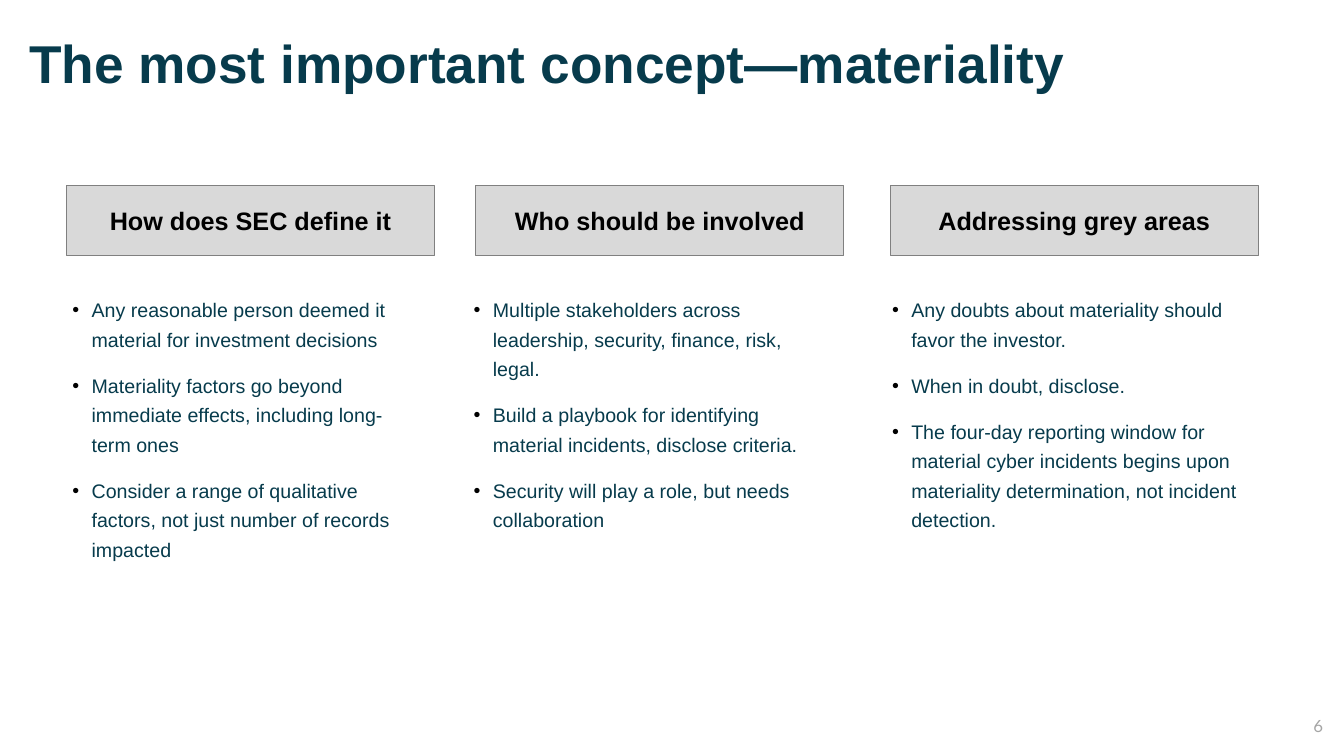
from lxml import etree
from pptx import Presentation
from pptx.dml.color import RGBColor
from pptx.enum.shapes import MSO_SHAPE
from pptx.enum.text import MSO_ANCHOR as ANCHOR, MSO_AUTO_SIZE as AUTO, PP_ALIGN as ALIGN
from pptx.oxml.ns import qn
from pptx.util import Inches, Pt

COLORS = {"navy": "073B4C", "black": "000000", "header": "D9D9D9",
          "border": "808080", "number": "A5A5A5"}
HEADER_TOP, HEADER_W, HEADER_H = 1.84, 3.65, 0.7
BULLETS_TOP = 2.8

# header text, header left, bullet box (left, width, height), bullets
COLUMNS = [
    ("How does SEC define it", 0.66, (0.47, 3.65, 2.72), [
        "Any reasonable person deemed it material for investment decisions",
        "Materiality factors go beyond immediate effects, including long-term ones",
        "Consider a range of qualitative factors, not just number of records impacted"]),
    ("Who should be involved", 4.72, (4.45, 3.92, 2.52), [
        "Multiple stakeholders across leadership, security, finance, risk, legal.",
        "Build a playbook for identifying material incidents, disclose criteria.",
        "Security will play a role, but needs collaboration"]),
    ("Addressing grey areas", 8.83, (8.6, 3.87, 2.52), [
        "Any doubts about materiality should favor the investor.",
        "When in doubt, disclose.",
        "The four-day reporting window for material cyber incidents begins upon "
        "materiality determination, not incident detection."]),
]


def rgb(name):
    return RGBColor.from_string(COLORS[name])


def set_frame(sp, inset_x, inset_y, anchor):
    tf = sp.text_frame
    tf.word_wrap = True
    tf.vertical_anchor = anchor
    tf.margin_left = tf.margin_right = Inches(inset_x)
    tf.margin_top = tf.margin_bottom = Inches(inset_y)
    return tf


def add_run(p, text, size, color, bold=False, font="Arial"):
    r = p.add_run()
    r.text = text
    r.font.name = font
    r.font.size = Pt(size)
    r.font.bold = bold
    r.font.color.rgb = rgb(color)


def add_bullet(p):
    pPr = p._p.get_or_add_pPr()
    pPr.set("marL", str(Inches(0.34)))
    pPr.set("indent", str(Inches(-0.19)))
    clr = etree.SubElement(pPr, qn("a:buClr"))
    etree.SubElement(clr, qn("a:srgbClr"), val=COLORS["black"])
    etree.SubElement(pPr, qn("a:buFont"), typeface="Arial")
    etree.SubElement(pPr, qn("a:buChar"), char="•")


def add_line(s, box, text, size, color, align, bold=False, font="Arial", spacing=1.0):
    """One line of text, centred vertically in its box."""
    sp = s.shapes.add_textbox(*map(Inches, box))
    p = set_frame(sp, 0.1, 0.05, ANCHOR.MIDDLE).paragraphs[0]
    p.alignment = align
    p.line_spacing = spacing
    add_run(p, text, size, color, bold, font)


def add_header(s, box, text):
    sp = s.shapes.add_shape(MSO_SHAPE.RECTANGLE, *map(Inches, box))
    sp.shadow.inherit = False
    sp.fill.solid()
    sp.fill.fore_color.rgb = rgb("header")
    sp.line.color.rgb = rgb("border")
    sp.line.width = Pt(0.75)
    tf = set_frame(sp, 0.2, 0.2, ANCHOR.MIDDLE)
    tf.auto_size = AUTO.SHAPE_TO_FIT_TEXT
    p = tf.paragraphs[0]
    p.alignment = ALIGN.CENTER
    add_run(p, text, 18, "black", bold=True)


def add_bullets(s, box, bullets):
    sp = s.shapes.add_textbox(*map(Inches, box))
    tf = set_frame(sp, 0.1, 0.1, ANCHOR.TOP)
    for i, text in enumerate(bullets):
        p = tf.add_paragraph() if i else tf.paragraphs[0]
        p.line_spacing = 1.25
        p.space_after = Pt(12)
        add_bullet(p)
        add_run(p, text, 14, "navy")


def main():
    prs = Presentation()
    prs.slide_width, prs.slide_height = Inches(13.33), Inches(7.5)
    s = prs.slides.add_slide(prs.slide_layouts[6])

    # Title
    add_line(s, (0.19, 0.17, 11.5, 0.97), "The most important concept—materiality",
             38, "navy", ALIGN.LEFT, bold=True, spacing=0.9)

    # Three columns
    for header, header_left, (left, width, height), bullets in COLUMNS:
        add_header(s, (header_left, HEADER_TOP, HEADER_W, HEADER_H), header)
        add_bullets(s, (left, BULLETS_TOP, width, height), bullets)

    # Slide number
    add_line(s, (12.53, 7, 0.69, 0.4), "6", 12, "number", ALIGN.RIGHT, font="Lato")

    prs.save("out.pptx")


if __name__ == "__main__":
    main()
